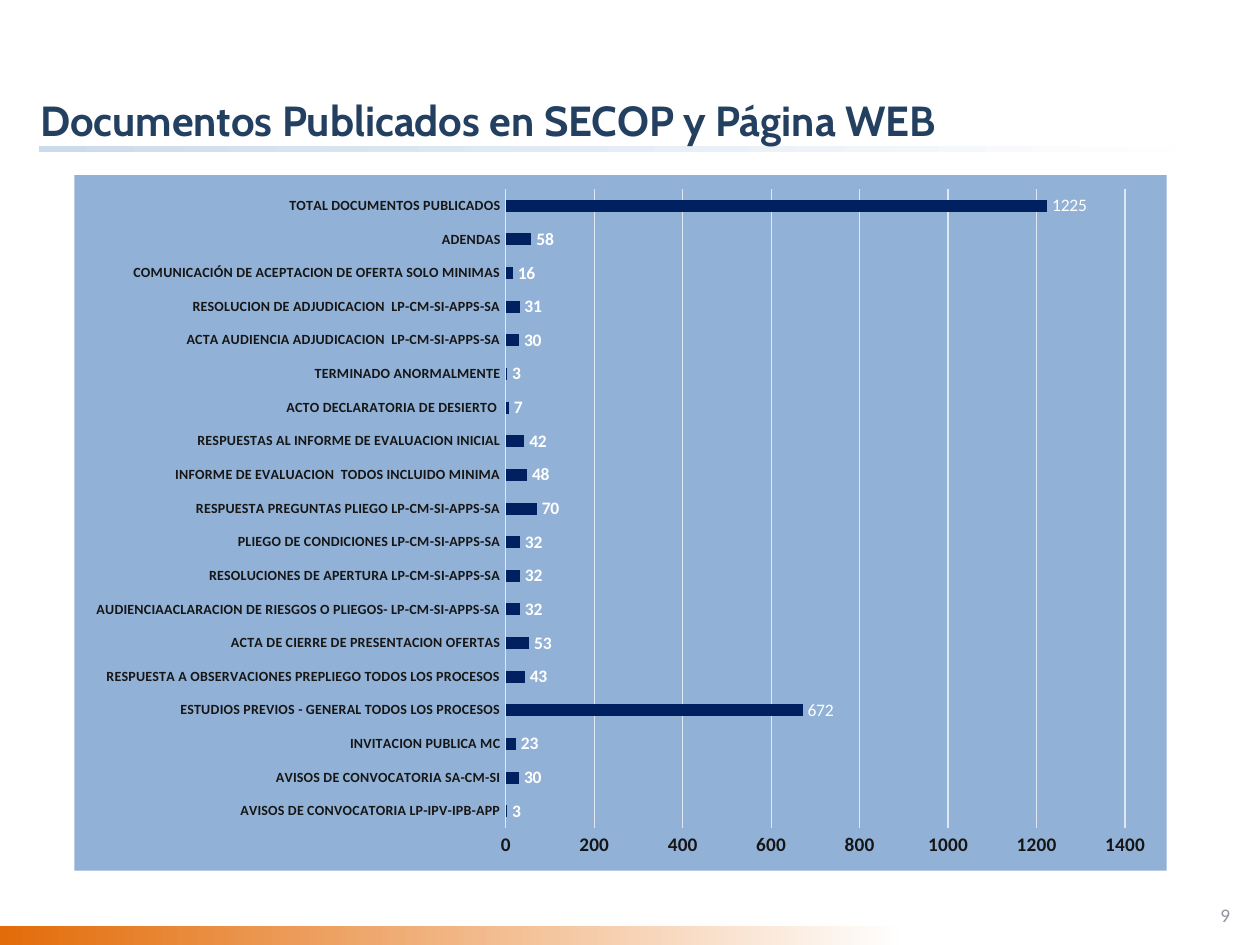
from typing import NamedTuple

import pptx
import pptx.chart.data
import pptx.dml.color
import pptx.enum.chart
import pptx.enum.shapes
import pptx.enum.text
import pptx.oxml
import pptx.oxml.ns
import pptx.util
from pptx.util import Inches

NS = pptx.oxml.ns.nsdecls("c", "a")


class Band(NamedTuple):
    left: float
    top: float
    width: float
    height: float
    start: str
    end: str


class Label(NamedTuple):
    left: float
    top: float
    width: float
    height: float
    text: str
    face: str
    size: float
    color: str
    bold: bool
    align: pptx.enum.text.PP_ALIGN


class Count(NamedTuple):
    name: str
    value: int
    shown: str = ""


BANDS = [
    Band(0.31, 1.16, 9.39, 0.05, "CCDBEC", "FFFFFF"),
    Band(0, 7.35, 7.19, 0.15, "E36C09", "FFFFFF"),
]
LABELS = [
    Label(0.32, 0.75, 9.4, 0.4, "Documentos Publicados en SECOP y Página WEB",
          "Cabin", 24, "244061", True, pptx.enum.text.PP_ALIGN.LEFT),
    Label(9.49, 7.06, 0.47, 0.4, "9", "Calibri", 11, "8E939E", False,
          pptx.enum.text.PP_ALIGN.CENTER),
]
COUNTS = [
    Count("AVISOS DE CONVOCATORIA LP-IPV-IPB-APP", 3),
    Count("AVISOS DE CONVOCATORIA SA-CM-SI", 30),
    Count("INVITACION PUBLICA MC", 23),
    Count("ESTUDIOS PREVIOS - GENERAL TODOS LOS PROCESOS", 671, "672"),
    Count("RESPUESTA A OBSERVACIONES PREPLIEGO TODOS LOS PROCESOS", 43),
    Count("ACTA DE CIERRE DE PRESENTACION OFERTAS", 53),
    Count("AUDIENCIAACLARACION DE RIESGOS O PLIEGOS- LP-CM-SI-APPS-SA", 32),
    Count("RESOLUCIONES DE APERTURA LP-CM-SI-APPS-SA", 32),
    Count("PLIEGO DE CONDICIONES LP-CM-SI-APPS-SA", 32),
    Count("RESPUESTA PREGUNTAS PLIEGO LP-CM-SI-APPS-SA", 70),
    Count("INFORME DE EVALUACION  TODOS INCLUIDO MINIMA", 48),
    Count("RESPUESTAS AL INFORME DE EVALUACION INICIAL", 42),
    Count("ACTO DECLARATORIA DE DESIERTO ", 7),
    Count("TERMINADO ANORMALMENTE", 3),
    Count("ACTA AUDIENCIA ADJUDICACION  LP-CM-SI-APPS-SA", 30),
    Count("RESOLUCION DE ADJUDICACION  LP-CM-SI-APPS-SA", 31),
    Count("COMUNICACIÓN DE ACEPTACION DE OFERTA SOLO MINIMAS", 16),
    Count("ADENDAS", 58),
    Count("TOTAL DOCUMENTOS PUBLICADOS", 1224, "1225"),
]


def tint(color, code: str) -> None:
    """Set a colour object from a hex string."""
    color.rgb = pptx.dml.color.RGBColor.from_string(code)


def set_font(font, face: str, size: float, code: str, bold: bool) -> None:
    font.name = face
    font.size = pptx.util.Pt(size)
    font.bold = bold
    tint(font.color, code)


def draw_band(slide, band: Band) -> None:
    shape = slide.shapes.add_shape(
        pptx.enum.shapes.MSO_SHAPE.RECTANGLE, Inches(band.left),
        Inches(band.top), Inches(band.width), Inches(band.height))
    shape.shadow.inherit = False
    shape.line.fill.background()
    shape.fill.gradient()
    shape.fill.gradient_angle = 0
    for stop, code in zip(shape.fill.gradient_stops, (band.start, band.end)):
        tint(stop.color, code)


def draw_label(slide, label: Label) -> None:
    box = slide.shapes.add_textbox(
        Inches(label.left), Inches(label.top),
        Inches(label.width), Inches(label.height))
    frame = box.text_frame
    frame.word_wrap = True
    frame.margin_left = frame.margin_right = 0
    frame.margin_top = frame.margin_bottom = 0
    frame.vertical_anchor = pptx.enum.text.MSO_ANCHOR.MIDDLE
    frame.text = label.text
    line = frame.paragraphs[0]
    line.alignment = label.align
    set_font(line.runs[0].font, label.face, label.size, label.color, label.bold)


def style_axis(axis, size: float) -> None:
    none = pptx.enum.chart.XL_TICK_MARK.NONE
    axis.major_tick_mark = axis.minor_tick_mark = none
    set_font(axis.tick_labels.font, "Calibri", size, "161616", True)


def style_rule(line) -> None:
    tint(line.color, "DEE7F3")
    line.width = pptx.util.Pt(0.75)


def style_panel(chart, code: str) -> None:
    """Fill the chart area and fix the inner plot area."""
    root = chart._chartSpace
    root.chart.addnext(pptx.oxml.parse_xml(
        f'<c:spPr {NS}><a:solidFill><a:srgbClr val="{code}"/></a:solidFill>'
        '<a:ln><a:noFill/></a:ln></c:spPr>'))
    spots = {"x": 0.395, "y": 0.02, "w": 0.567, "h": 0.919}
    modes = "".join(f'<c:{key}Mode val="edge"/>' for key in "xy")
    sizes = "".join(f'<c:{key} val="{val}"/>' for key, val in spots.items())
    plot = root.chart.plotArea
    for old in plot.findall(pptx.oxml.ns.qn("c:layout")):
        plot.remove(old)
    plot.insert(0, pptx.oxml.parse_xml(
        f'<c:layout {NS}><c:manualLayout><c:layoutTarget val="inner"/>'
        f'{modes}{sizes}</c:manualLayout></c:layout>'))


def draw_chart(slide, counts: list[Count]) -> None:
    data = pptx.chart.data.CategoryChartData(number_format="0")
    data.categories = [count.name for count in counts]
    data.add_series("Series 1", [count.value for count in counts])
    chart = slide.shapes.add_chart(
        pptx.enum.chart.XL_CHART_TYPE.BAR_CLUSTERED, Inches(0.59),
        Inches(1.39), Inches(8.67), Inches(5.52), data).chart
    chart.has_legend = chart.has_title = False
    set_font(chart.font, "Calibri", 10, "386295", False)
    style_panel(chart, "91B1D6")

    names, scale = chart.category_axis, chart.value_axis
    style_axis(names, 8)
    style_rule(names.format.line)
    style_axis(scale, 11)
    scale.format.line.fill.background()
    scale.has_major_gridlines = True
    style_rule(scale.major_gridlines.format.line)
    scale.minimum_scale, scale.maximum_scale = 0, 1400
    scale.major_unit = 200

    plot = chart.plots[0]
    plot.gap_width = 182
    plot.vary_by_categories = False
    bars = plot.series[0]
    bars.format.fill.solid()
    tint(bars.format.fill.fore_color, "002060")
    end = pptx.enum.chart.XL_LABEL_POSITION.OUTSIDE_END
    marks = bars.data_labels
    marks.show_value = True
    marks.number_format, marks.number_format_is_linked = "0", False
    marks.position = end
    set_font(marks.font, "Calibri", 10, "FFFFFF", True)
    for spot, count in enumerate(counts):
        if count.shown:
            mark = bars.points[spot].data_label
            mark.text_frame.text = count.shown
            run = mark.text_frame.paragraphs[0].runs[0]
            set_font(run.font, "Calibri", 10, "FFFFFF", False)
            mark.position = end


def main() -> None:
    deck = pptx.Presentation()
    deck.slide_width, deck.slide_height = Inches(10), Inches(7.5)
    slide = deck.slides.add_slide(deck.slide_layouts[6])
    for band in BANDS:
        draw_band(slide, band)
    for label in LABELS:
        draw_label(slide, label)
    draw_chart(slide, COUNTS)
    deck.save("out.pptx")


if __name__ == "__main__":
    main()
